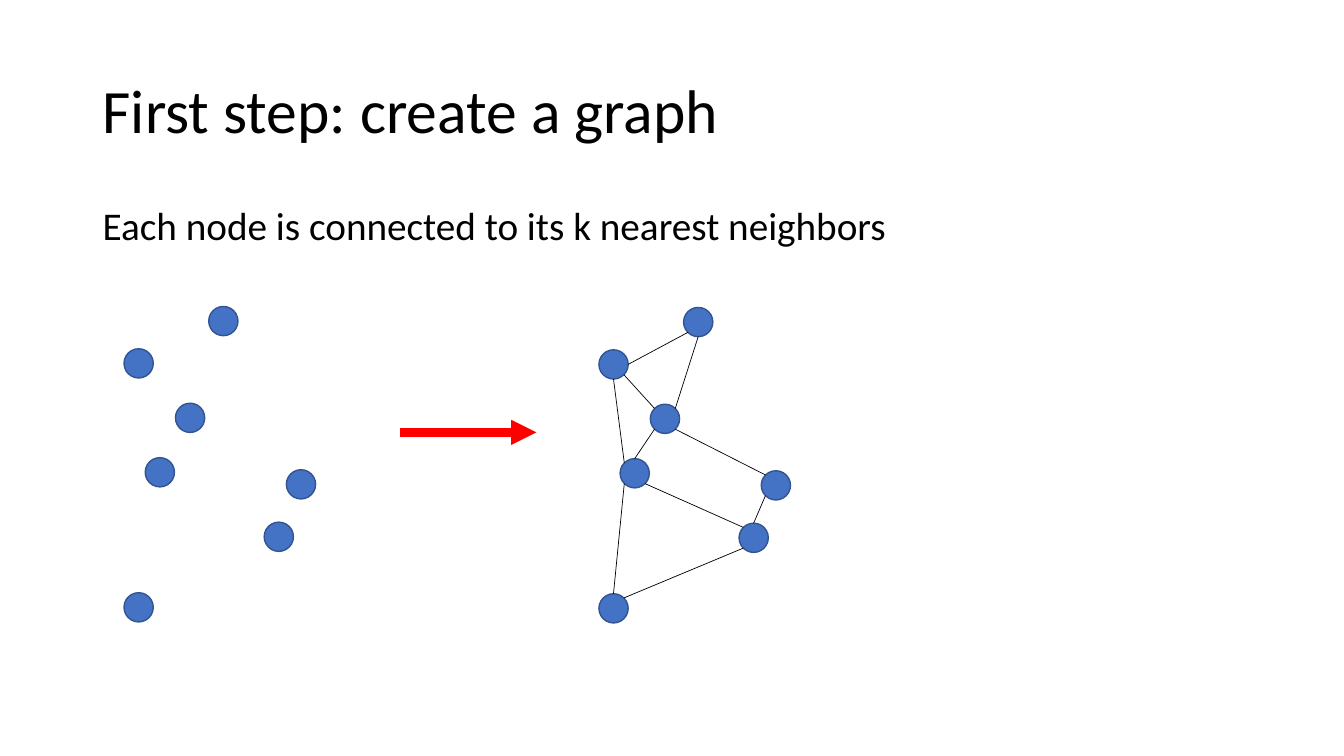
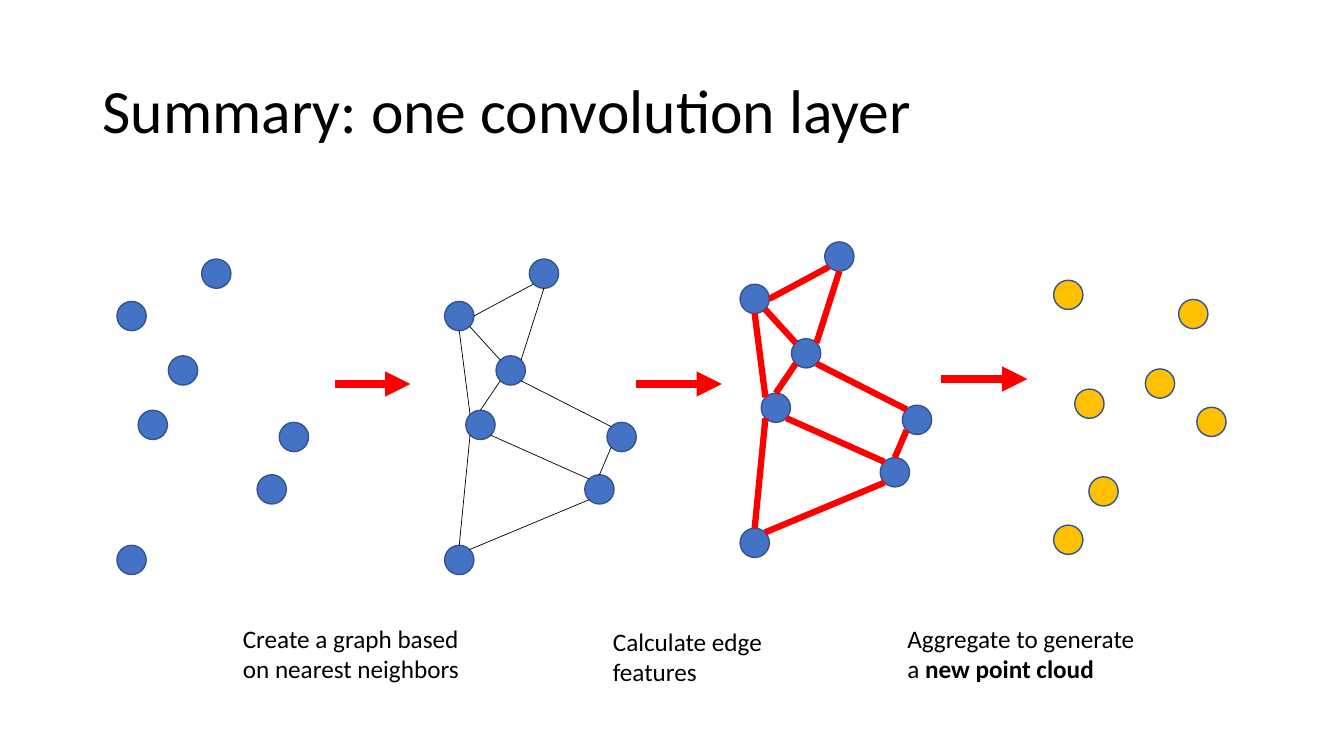
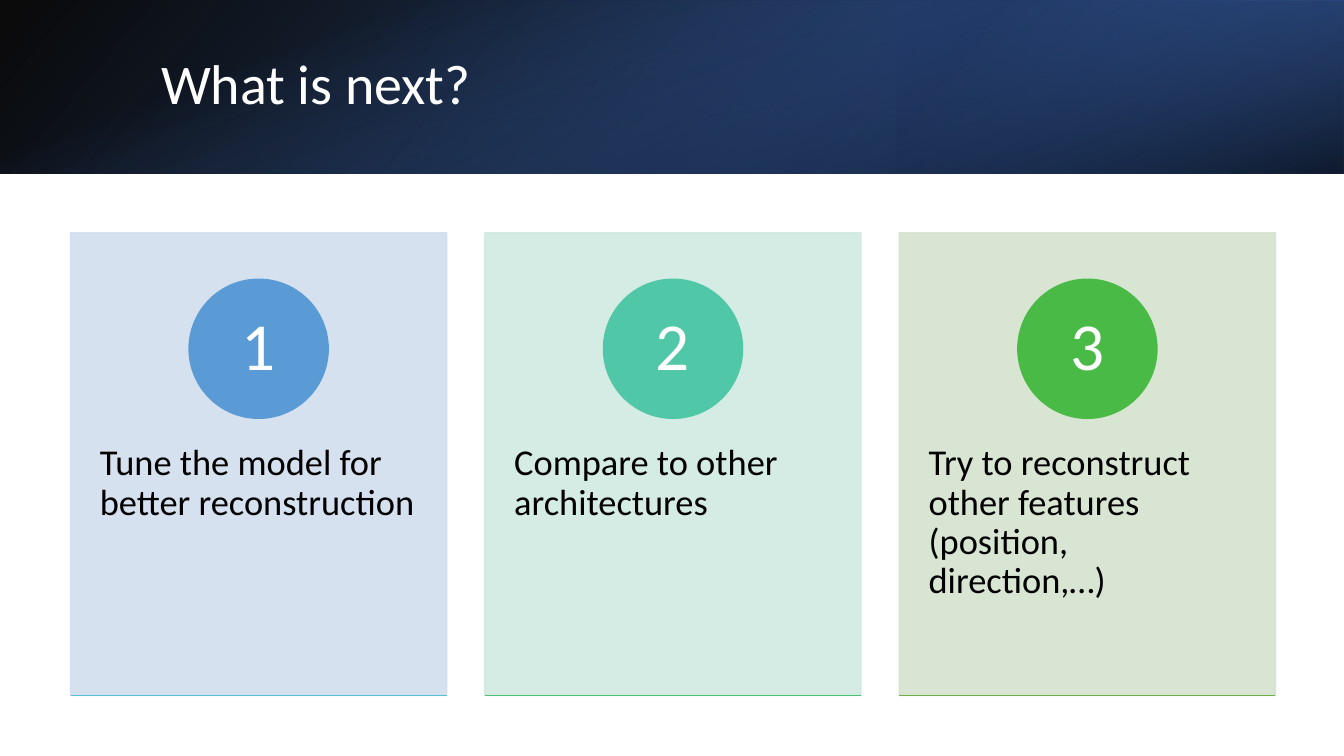
from lxml import etree
from pptx import Presentation
from pptx import util as u
from pptx.dml.color import RGBColor
from pptx.enum import shapes, text
from pptx.oxml.ns import qn

EMU_PER_PX = 9144  # 100 px to the inch
FONT = "Calibri"

BLACK = RGBColor(0x00, 0x00, 0x00)
WHITE = RGBColor(0xFF, 0xFF, 0xFF)
RED = RGBColor(0xFF, 0x00, 0x00)
BLUE = RGBColor(0x44, 0x72, 0xC4)
GOLD = RGBColor(0xFF, 0xC0, 0x00)
NODE_OUTLINE = RGBColor(0x32, 0x54, 0x91)
DEEP_BLUE = RGBColor(0x2F, 0x55, 0x97)
NAVY = RGBColor(0x20, 0x38, 0x64)

NODE_SIZE = 29
CLOUD = {
    "left": (0, 42), "top": (84, 0), "bottom": (0, 284), "inner": (51, 96),
    "middle": (21, 150), "right": (161, 162), "lower": (139, 214),
}
EDGES = [
    ("top", "sw", "left", "e"), ("top", "s", "inner", "ne"),
    ("left", "se", "inner", "nw"), ("inner", "sw", "middle", "n"),
    ("left", "s", "middle", "nw"), ("inner", "se", "right", "nw"),
    ("right", "sw", "lower", "n"), ("middle", "se", "lower", "nw"),
    ("lower", "sw", "bottom", "ne"), ("middle", "sw", "bottom", "n"),
]
NEW_CLOUD = [(1045, 278), (1169, 297), (1045, 521), (1136, 366),
             (1066, 386), (1187, 404), (1080, 473)]

CARD_LEFT, CARD_TOP, CARD_WIDTH, CARD_HEIGHT, CARD_PITCH = 70, 231, 373, 459, 411
BADGE_SIZE = 138
CARDS = [
    ("Tune the model for better reconstruction", RGBColor(0xD2, 0xDE, 0xEF),
     RGBColor(0x5B, 0x9B, 0xD5), RGBColor(0x55, 0xC3, 0xCF)),
    ("Compare to other architectures", RGBColor(0xD0, 0xEA, 0xE1),
     RGBColor(0x50, 0xC8, 0xA7), RGBColor(0x4B, 0xC1, 0x74)),
    ("Try to reconstruct other features (position, direction,…)",
     RGBColor(0xD5, 0xE3, 0xCF), RGBColor(0x4A, 0xBA, 0x46),
     RGBColor(0x70, 0xAD, 0x47)),
]


def px(length):
    return u.Emu(round(length * EMU_PER_PX))


def set_opacity(shape, percents):
    """Give each colour of the shape, in document order, its opacity."""
    colors = shape._element.spPr.iter(qn("a:srgbClr"))
    for color, percent in zip(list(colors), percents):
        etree.SubElement(color, qn("a:alpha")).set("val", str(percent * 1000))


def edge_point(origin, node, side):
    """Point on the rim of a cloud node in a compass direction."""
    dx = ("e" in side) - ("w" in side)
    dy = ("s" in side) - ("n" in side)
    radius = NODE_SIZE / 2
    reach = radius * (0.71 if dx and dy else 1)
    x, y = CLOUD[node]
    return origin[0] + x + radius + dx * reach, origin[1] + y + radius + dy * reach


class Deck:
    def __init__(self):
        self.presentation = Presentation()
        self.presentation.slide_width = u.Inches(13.33)
        self.presentation.slide_height = u.Inches(7.5)
        self.slide = None

    def new_slide(self):
        self.slide = self.presentation.slides.add_slide(
            self.presentation.slide_layouts[6])

    def fill_frame(self, frame, runs, size, color=BLACK, spacing=None, align=None,
                   middle=False, margins=(10, 5)):
        """Fill a text frame with one paragraph of (words, bold) runs."""
        frame.word_wrap = True
        frame.margin_left = frame.margin_right = px(margins[0])
        frame.margin_top = frame.margin_bottom = px(margins[1])
        frame.vertical_anchor = (text.MSO_ANCHOR.MIDDLE if middle
                                 else text.MSO_ANCHOR.TOP)
        paragraph = frame.paragraphs[0]
        paragraph.alignment = align
        paragraph.line_spacing = spacing
        paragraph.font.name = FONT
        paragraph.font.size = u.Pt(size)
        paragraph.font.color.rgb = color
        for words, bold in runs:
            run = paragraph.add_run()
            run.text = words
            if bold:
                run.font.bold = True

    def text(self, box, words, size, **style):
        runs = [(words, False)] if isinstance(words, str) else words
        shape = self.slide.shapes.add_textbox(*map(px, box))
        self.fill_frame(shape.text_frame, runs, size, **style)

    def title(self, words, box=(92, 40, 1150, 145), size=44, color=BLACK):
        self.text(box, words, size, color=color, spacing=0.9, middle=True)

    def shape(self, kind, box, fill=None, outline=None):
        shape = self.slide.shapes.add_shape(kind, *map(px, box))
        shape.shadow.inherit = False
        if fill is not None:
            shape.fill.solid()
            shape.fill.fore_color.rgb = fill
        if outline is None:
            shape.line.fill.background()
        else:
            shape.line.color.rgb = outline
            shape.line.width = u.Pt(1)
        return shape

    def line(self, start, end, color, width, arrow=False):
        connector = self.slide.shapes.add_connector(
            shapes.MSO_CONNECTOR.STRAIGHT, *map(px, (*start, *end)))
        connector.line.color.rgb = color
        connector.line.width = u.Pt(width)
        properties = connector._element.spPr
        if arrow:
            tail = etree.SubElement(properties.find(qn("a:ln")), qn("a:tailEnd"))
            tail.set("type", "triangle")
        etree.SubElement(properties, qn("a:effectLst"))

    def arrow(self, left, right, y):
        self.line((left, y), (right, y), RED, 6, arrow=True)

    def nodes(self, points, fill=BLUE):
        for x, y in points:
            self.shape(shapes.MSO_SHAPE.OVAL, (x, y, NODE_SIZE, NODE_SIZE),
                       fill, NODE_OUTLINE)

    def cloud(self, left, top):
        self.nodes([(left + x, top + y) for x, y in CLOUD.values()])

    def graph(self, left, top, color=BLACK, width=0.5):
        self.cloud(left, top)
        for start, start_side, end, end_side in EDGES:
            self.line(edge_point((left, top), start, start_side),
                      edge_point((left, top), end, end_side), color, width)

    def gradient(self, box, stops, angle, rotation=0, flip=False):
        """Rectangle shaded by (position, colour, opacity) stops, clockwise angle."""
        shape = self.shape(shapes.MSO_SHAPE.RECTANGLE, box)
        shape.rotation = rotation
        if flip:
            shape._element.spPr.find(qn("a:xfrm")).set("flipH", "1")
        shape.fill.gradient()
        shape.fill.gradient_angle = 360 - angle
        for stop, (position, color, _) in zip(shape.fill.gradient_stops, stops):
            stop.position = position
            stop.color.rgb = color
        set_opacity(shape, [opacity for _, _, opacity in stops])

    def card(self, index, words, tint, badge_color, rule_color):
        left = CARD_LEFT + index * CARD_PITCH
        bottom = CARD_TOP + CARD_HEIGHT
        panel = self.shape(shapes.MSO_SHAPE.RECTANGLE,
                           (left, CARD_TOP, CARD_WIDTH, CARD_HEIGHT), tint, tint)
        set_opacity(panel, (90, 90))
        self.text((left, 405, CARD_WIDTH, 275), words, 26, spacing=0.9,
                  margins=(29, 36))
        badge_left = left + (CARD_WIDTH - BADGE_SIZE) / 2
        badge = self.shape(shapes.MSO_SHAPE.OVAL,
                           (badge_left, 277, BADGE_SIZE, BADGE_SIZE),
                           badge_color, badge_color)
        self.fill_frame(badge.text_frame, [(str(index + 1), False)], 48,
                        color=WHITE, spacing=0.9, align=text.PP_ALIGN.CENTER,
                        middle=True, margins=(11, 1))
        self.line((left, bottom), (left + CARD_WIDTH, bottom), rule_color, 1)


def first_step(deck):
    deck.new_slide()
    deck.title("First step: create a graph")
    deck.text((92, 200, 1150, 476),
              "Each node is connected to its k nearest neighbors", 28, spacing=0.9)
    deck.cloud(123, 304)
    deck.graph(594, 305)
    deck.arrow(397, 532, 429)


def summary(deck):
    deck.new_slide()
    deck.title("Summary: one convolution layer")
    deck.cloud(116, 257)
    deck.graph(441, 257)
    deck.graph(734, 240, RED, 4.5)
    deck.nodes(NEW_CLOUD, GOLD)
    for left, right, y in [(332, 407, 381), (631, 716, 381), (933, 1019, 376)]:
        deck.arrow(left, right, y)
    deck.text((231, 613, 239, 71), "Create a graph based on nearest neighbors", 18)
    deck.text((598, 616, 171, 71), "Calculate edge features", 18)
    deck.text((890, 613, 261, 71),
              [("Aggregate to generate a ", False), ("new point cloud", True)], 18)


def what_is_next(deck):
    deck.new_slide()
    deck.gradient((0, 0, 1333, 172), [(0, BLACK, 96), (1, DEEP_BLUE, 100)],
                  140, flip=True)
    deck.gradient((889, 0, 444, 172), [(0.19, NAVY, 68), (1, BLUE, 79)],
                  320, rotation=180, flip=True)
    deck.gradient((580, -580, 172, 1333), [(0.23, BLUE, 0), (0.99, BLACK, 74)],
                  340, rotation=90)
    deck.title("What is next?", (150, 38, 1098, 96), 40, WHITE)
    for index, card in enumerate(CARDS):
        deck.card(index, *card)


def main():
    deck = Deck()
    first_step(deck)
    summary(deck)
    what_is_next(deck)
    deck.presentation.save("out.pptx")


if __name__ == "__main__":
    main()
